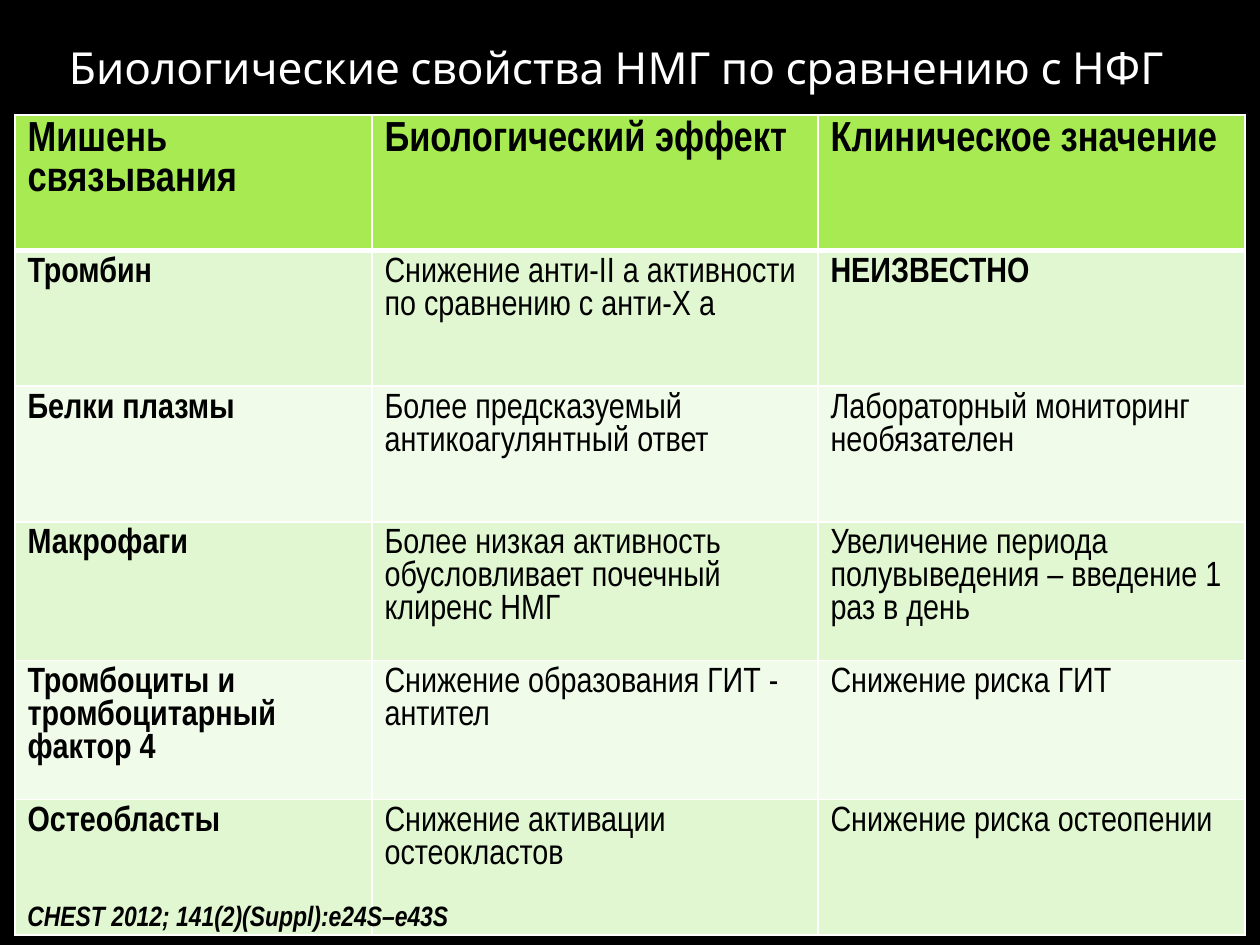
from lxml import etree
from pptx import Presentation
from pptx.dml.color import RGBColor
from pptx.enum.text import MSO_ANCHOR
from pptx.oxml.ns import qn
from pptx.util import Emu, Pt

MIDDLE = MSO_ANCHOR.MIDDLE
TOP = MSO_ANCHOR.TOP

BLACK, WHITE = "000000", "FFFFFF"
HEADER_FILL = "A7EA52"
BAND_FILLS = ["F1FBE9", "E1F7D1"]
BODY_FONT = "Arial Narrow"

COLUMN_WIDTHS = [357, 446, 427]
ROWS = [
    ["Мишень связывания", "Биологический эффект", "Клиническое значение"],
    ["Тромбин", "Снижение анти-II a активности по сравнению с анти-Х а", "НЕИЗВЕСТНО"],
    ["Белки плазмы", "Более предсказуемый антикоагулянтный ответ",
     "Лабораторный мониторинг необязателен"],
    ["Макрофаги", "Более низкая активность обусловливает почечный клиренс НМГ",
     "Увеличение периода полувыведения – введение 1 раз в день"],
    ["Тромбоциты и тромбоцитарный фактор 4", "Снижение образования ГИТ - антител",
     "Снижение риска ГИТ"],
    ["Остеобласты", "Снижение активации остеокластов", "Снижение риска остеопении"],
]
BOLD_CELLS = {(1, 2)}


def px(n):
    return Emu(round(n * 914400 / 126))


def rgb(value):
    return RGBColor.from_string(value)


def set_attrs(obj, values):
    for name, value in values.items():
        setattr(obj, name, value)


def write(tf, text, color, font):
    r = tf.paragraphs[0].add_run()
    r.text = text
    set_attrs(r.font, font)
    r.font.color.rgb = rgb(color)


def add_text(s, box, text, color, font, frame):
    tf = s.shapes.add_textbox(*map(px, box)).text_frame
    set_attrs(tf, {"word_wrap": True, **frame})
    write(tf, text, color, font)


def set_borders(cell, widths):
    tcPr = cell._tc.get_or_add_tcPr()
    for i, (side, width) in enumerate(widths.items()):
        ln = etree.Element(qn(f"a:ln{side}"), w=str(Pt(width)))
        fill = etree.SubElement(ln, qn("a:solidFill"))
        etree.SubElement(fill, qn("a:srgbClr"), val=WHITE)
        tcPr.insert(i, ln)


def add_properties_table(s, x, y, height):
    size = len(ROWS), len(COLUMN_WIDTHS)
    table = s.shapes.add_table(*size, px(x), px(y), px(sum(COLUMN_WIDTHS)), px(height)).table
    set_attrs(table, {"first_row": False, "horz_banding": False})
    for column, width in zip(table.columns, COLUMN_WIDTHS):
        column.width = px(width)
    for i, row in enumerate(ROWS):
        header = i == 0
        for j, text in enumerate(row):
            cell = table.cell(i, j)
            cell.fill.solid()
            cell.fill.fore_color.rgb = rgb(HEADER_FILL if header else BAND_FILLS[i % 2])
            set_borders(cell, {"L": 1, "R": 1, "T": 3 if i == 1 else 1, "B": 3 if header else 1})
            font = {"name": BODY_FONT, "size": Pt(24 if header else 20),
                    "bold": header or j == 0 or (i, j) in BOLD_CELLS}
            write(cell.text_frame, text, BLACK, font)


def main():
    prs = Presentation()
    set_attrs(prs, {"slide_width": px(1260), "slide_height": px(945)})
    s = prs.slides.add_slide(prs.slide_layouts[6])
    s.background.fill.solid()
    s.background.fill.fore_color.rgb = rgb(BLACK)

    inset = px(6)
    add_text(s, (63, 38, 1134, 58), "Биологические свойства НМГ по сравнению с НФГ", WHITE,
             {"name": "Karla", "size": Pt(25.2)},
             {"vertical_anchor": MIDDLE, "margin_left": inset, "margin_right": inset,
              "margin_top": inset, "margin_bottom": inset})
    add_properties_table(s, 15, 115, 814)
    add_text(s, (15, 892, 460, 47), "CHEST 2012; 141(2)(Suppl):e24S–e43S", BLACK,
             {"name": BODY_FONT, "size": Pt(16), "bold": True, "italic": True},
             {"vertical_anchor": TOP})
    prs.save("out.pptx")


if __name__ == "__main__":
    main()
